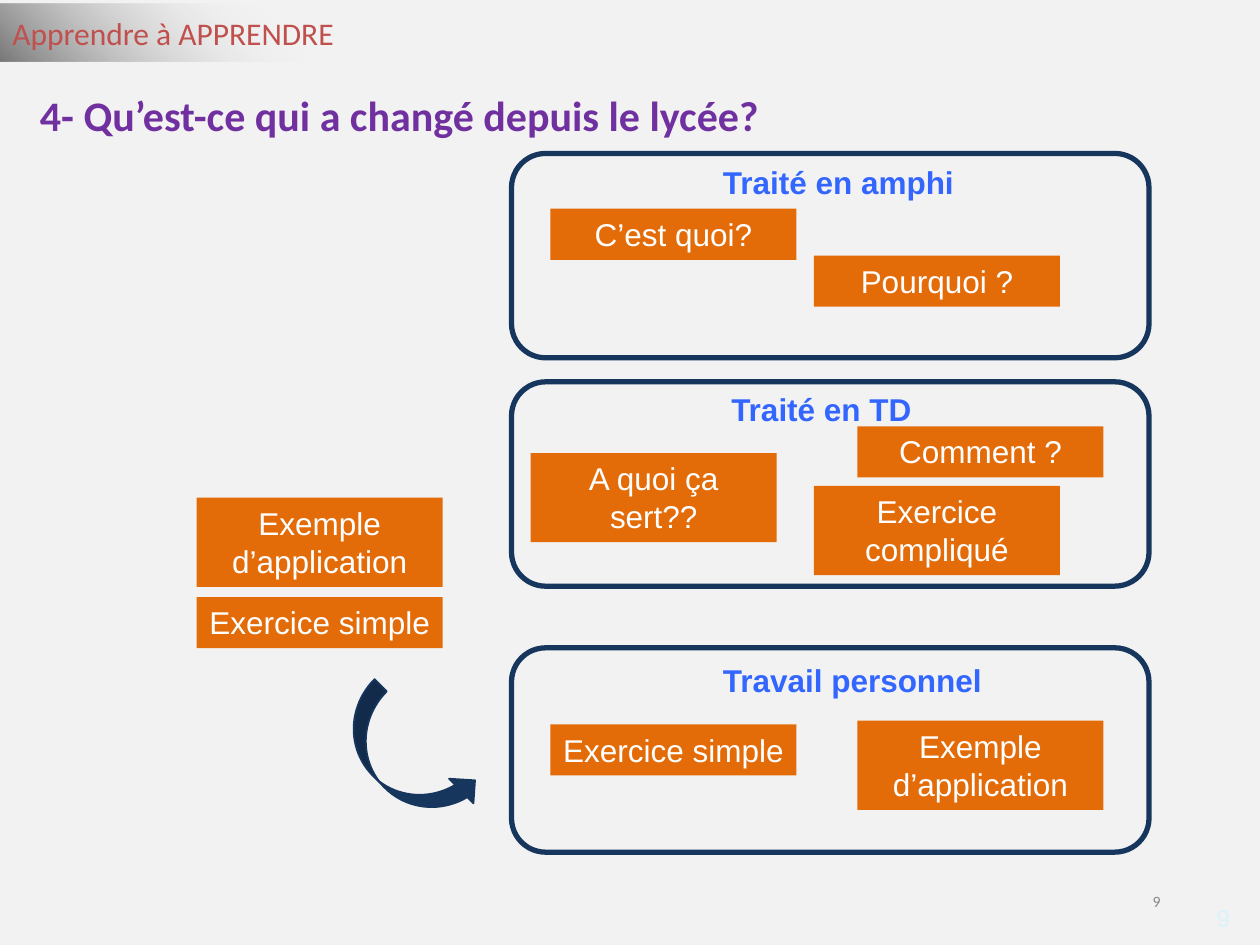
from dataclasses import dataclass

from pptx import Presentation
from pptx.dml.color import RGBColor
from pptx.enum.shapes import MSO_SHAPE as Shape
from pptx.enum.text import MSO_ANCHOR as Anchor, MSO_AUTO_SIZE as AutoSize, PP_ALIGN as Align
from pptx.oxml import parse_xml
from pptx.oxml.ns import nsdecls, qn
from pptx.util import Pt


@dataclass(frozen=True)
class Theme:
    background: str = "F2F2F2"
    banner: str = "C0504D"
    heading: str = "7030A0"
    navy: str = "17365D"
    orange: str = "E36C09"
    blue: str = "3366FF"
    white: str = "FFFFFF"
    gray: str = "888888"
    pale: str = "DAF3FA"
    heading_font: str = "Calibri"
    body_font: str = "Arial"
    heading_size: float = 24
    body_size: float = 18
    corner_size: float = 14
    number_size: float = 9


class SlideBuilder:
    def __init__(self, slide, theme):
        self.slide = slide
        self.theme = theme
        slide.background.fill.solid()
        slide.background.fill.fore_color.rgb = RGBColor.from_string(theme.background)

    def shape(self, kind, box, fill=None, line=None, line_width=1):
        shape = self.slide.shapes.add_shape(kind, *map(Pt, box))
        shape.shadow.inherit = False
        if fill:
            shape.fill.solid()
            shape.fill.fore_color.rgb = RGBColor.from_string(fill)
        else:
            shape.fill.background()
        if line:
            shape.line.color.rgb = RGBColor.from_string(line)
            shape.line.width = Pt(line_width)
        else:
            shape.line.fill.background()
        return shape

    def add_text(self, shape, text, size, color, font, bold=False,
                 align=Align.LEFT, anchor=Anchor.TOP, wrap=True):
        frame = shape.text_frame
        frame.word_wrap = wrap
        frame.vertical_anchor = anchor
        paragraph = frame.paragraphs[0]
        paragraph.alignment = align
        run = paragraph.add_run()
        run.text = text
        run.font.size = Pt(size)
        run.font.name = font
        run.font.bold = bold
        run.font.color.rgb = RGBColor.from_string(color)

    def label(self, text, box, size, color, font, **style):
        shape = self.slide.shapes.add_textbox(*map(Pt, box))
        self.add_text(shape, text, size, color, font, **style)

    def banner(self, text, box):
        theme = self.theme
        shape = self.shape(Shape.RECTANGLE, box)
        stops = "".join(
            f'<a:gs pos="{position * 1000}"><a:srgbClr val="{color}">'
            f'<a:alpha val="{alpha * 1000}"/></a:srgbClr></a:gs>'
            for position, color, alpha in ((0, "010101", 51), (60, "FEFEFE", 0), (100, "FEFEFE", 0)))
        gradient = parse_xml(
            f'<a:gradFill {nsdecls("a")} rotWithShape="1"><a:gsLst>{stops}</a:gsLst>'
            '<a:path path="circle"><a:fillToRect t="100000" r="100000"/></a:path></a:gradFill>')
        properties = shape.element.spPr
        properties.replace(properties.find(qn("a:noFill")), gradient)
        self.add_text(shape, text, theme.body_size, theme.banner, theme.heading_font,
                      anchor=Anchor.MIDDLE)

    def tile(self, text, left, top, lines=1):
        theme = self.theme
        height = 7.4 + 21.8 * lines
        shape = self.shape(Shape.RECTANGLE, (left, top, 140.6, height), theme.orange)
        self.add_text(shape, text, theme.body_size, theme.white, theme.body_font,
                      align=Align.CENTER)
        shape.text_frame.auto_size = AutoSize.SHAPE_TO_FIT_TEXT

    def panel(self, title, top, title_box):
        theme = self.theme
        shape = self.shape(Shape.ROUNDED_RECTANGLE, (292.3, top, 364.3, 116.8),
                           line=theme.navy, line_width=3)
        shape.adjustments[0] = 0.167
        self.label(title, title_box, theme.body_size, theme.blue, theme.body_font,
                   bold=True, wrap=False)

    def curved_arrow(self, box, rotation):
        theme = self.theme
        shape = self.shape(Shape.CURVED_RIGHT_ARROW, box, theme.navy, theme.navy)
        shape.rotation = rotation
        for index, value in enumerate((0.25, 0.5, 0.25)):
            shape.adjustments[index] = value


TILES = (
    ("C’est quoi?", 314.6, 119.3, 1),
    ("Pourquoi ?", 465.1, 146.1, 1),
    ("A quoi ça sert??", 303.3, 258.9, 2),
    ("Comment ?", 490, 243.6, 1),
    ("Exercice compliqué", 465.1, 277.7, 2),
    ("Exemple d’application", 112.4, 284.4, 2),
    ("Exercice simple", 112.4, 341.2, 1),
    ("Exemple d’application", 490, 411.8, 2),
    ("Exercice simple", 314.6, 414, 1),
)
PANELS = (
    ("Traité en amphi", 87.7, (406, 89.6, 147.6, 29.1)),
    ("Traité en TD", 218.2, (410.8, 219.2, 118.8, 29.1)),
    ("Travail personnel", 370.2, (406, 374.4, 163.4, 29.1)),
)


def main():
    presentation = Presentation()
    presentation.slide_width, presentation.slide_height = Pt(720), Pt(540)
    slide = presentation.slides.add_slide(presentation.slide_layouts[6])
    theme = Theme()
    builder = SlideBuilder(slide, theme)
    builder.banner("Apprendre à APPRENDRE", (0, 2.3, 280.8, 33.1))
    builder.label("9", (680, 510, 30, 28.8), theme.corner_size, theme.pale, theme.body_font,
                  align=Align.RIGHT, anchor=Anchor.MIDDLE)
    builder.label("9", (508.3, 500.4, 162, 28.8), theme.number_size, theme.gray,
                  theme.heading_font, align=Align.RIGHT, anchor=Anchor.MIDDLE)
    for tile in TILES:
        builder.tile(*tile)
    for panel in PANELS:
        builder.panel(*panel)
    builder.label("4- Qu’est-ce qui a changé depuis le lycée?", (15.8, 47.5, 640.8, 36),
                  theme.heading_size, theme.heading, theme.heading_font, bold=True)
    builder.curved_arrow((212.4, 388.8, 39.6, 91.4), 315.2)
    presentation.save("out.pptx")


if __name__ == "__main__":
    main()
